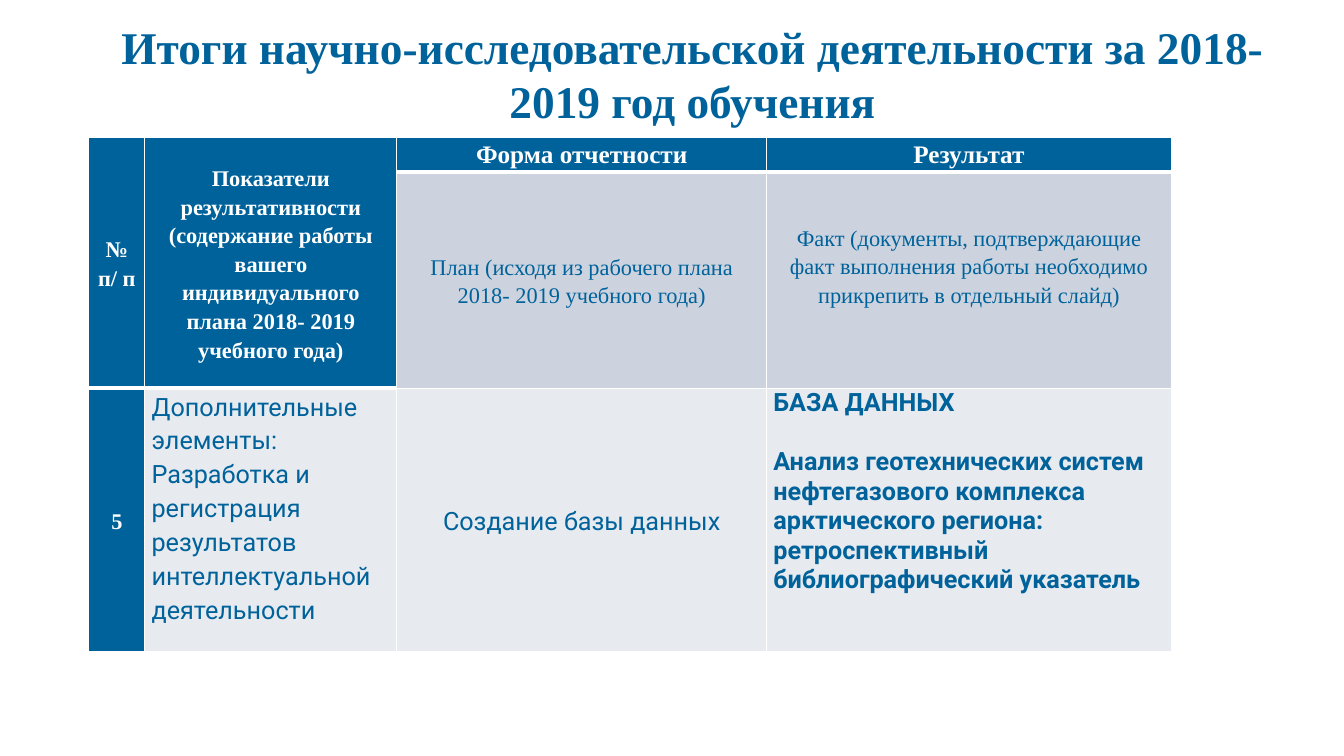
from dataclasses import dataclass

from lxml.etree import SubElement
from pptx import Presentation
from pptx.dml.color import RGBColor
from pptx.enum.text import MSO_ANCHOR as Anchor, PP_ALIGN as Align
from pptx.oxml.ns import qn
from pptx.util import Cm, Pt


@dataclass(frozen=True)
class Theme:
    blue: str = "00629B"
    white: str = "FFFFFF"
    plan_fill: str = "CCD3DE"
    row_fill: str = "E7EAEF"
    serif: str = "Times New Roman"
    sans: str = "Roboto"
    title_size: float = 32.4
    large: int = 18
    small: int = 16
    thin: int = 1
    thick: int = 3


THEME = Theme()
COLUMN_WIDTHS = (1.41, 6.35, 9.32, 10.2)
ROW_HEIGHTS = (0.84, 5.05, 6.63)


def add_paragraphs(frame, lines, size, font, color, bold=False,
                   align=Align.CENTER, spacing=None, gap=0):
    """Write each line as one paragraph, with a gap between neighbours."""
    for index, line in enumerate(lines):
        paragraph = frame.add_paragraph() if index else frame.paragraphs[0]
        paragraph.alignment = align
        if spacing:
            paragraph.line_spacing = spacing
        if index:
            paragraph.space_before = Pt(gap)
        run = paragraph.add_run()
        run.text = line
        run.font.size = Pt(size)
        run.font.name = font
        run.font.bold = bold
        run.font.color.rgb = RGBColor.from_string(color)


def set_borders(cell, bottom):
    """Draw white lines round a cell; they must come before its fill."""
    properties = cell._tc.get_or_add_tcPr()
    widths = {"a:lnL": THEME.thin, "a:lnR": THEME.thin,
              "a:lnT": THEME.thin, "a:lnB": bottom}
    for tag, width in widths.items():
        line = SubElement(properties, qn(tag), w=str(Pt(width)))
        fill = SubElement(line, qn("a:solidFill"))
        SubElement(fill, qn("a:srgbClr"), val=THEME.white)


def fill_cell(cell, lines, fill, size, font=THEME.serif, color=THEME.blue,
              anchor=Anchor.MIDDLE, bottom=THEME.thin, inset=0,
              spacing=1.15, **text):
    set_borders(cell, bottom)
    cell.fill.solid()
    cell.fill.fore_color.rgb = RGBColor.from_string(fill)
    cell.margin_left = cell.margin_right = Cm(0.17)
    cell.margin_top = 0
    cell.margin_bottom = Cm(inset)
    cell.vertical_anchor = anchor
    add_paragraphs(cell.text_frame, lines, size, font, color,
                   spacing=spacing, **text)


def add_title(slide, text):
    title = slide.shapes.add_textbox(Cm(2.21), Cm(0.71), Cm(30.48), Cm(2.29))
    title.text_frame.word_wrap = True
    title.text_frame.vertical_anchor = Anchor.MIDDLE
    add_paragraphs(title.text_frame, [text], THEME.title_size, THEME.serif,
                   THEME.blue, bold=True)


def add_results_grid(slide):
    grid = slide.shapes.add_table(
        len(ROW_HEIGHTS), len(COLUMN_WIDTHS), Cm(2.24), Cm(3.46),
        Cm(sum(COLUMN_WIDTHS)), Cm(sum(ROW_HEIGHTS))).table
    for column, width in zip(grid.columns, COLUMN_WIDTHS):
        column.width = Cm(width)
    for row, height in zip(grid.rows, ROW_HEIGHTS):
        row.height = Cm(height)
    for column in (0, 1):
        grid.cell(0, column).merge(grid.cell(1, column))
    return grid


def fill_header(grid):
    headings = (
        (["№ п/ п"], THEME.small, Anchor.MIDDLE),
        (["Показатели результативности",
          "(содержание работы вашего индивидуального плана "
          "2018- 2019 учебного года)"], THEME.small, Anchor.MIDDLE),
        (["Форма отчетности"], THEME.large, Anchor.TOP),
        (["Результат"], THEME.large, Anchor.TOP),
    )
    for column, (lines, size, anchor) in enumerate(headings):
        fill_cell(grid.cell(0, column), lines, THEME.blue, size,
                  color=THEME.white, anchor=anchor, bottom=THEME.thick,
                  bold=True)
    fill_cell(grid.cell(1, 2),
              ["План (исходя из рабочего плана 2018- 2019 учебного года)"],
              THEME.plan_fill, THEME.small)
    fill_cell(grid.cell(1, 3),
              ["Факт (документы, подтверждающие факт выполнения работы "
               "необходимо прикрепить в отдельный слайд)"],
              THEME.plan_fill, THEME.small, inset=0.75)


def fill_result(grid):
    number, indicator, plan, result = (grid.cell(2, c) for c in range(4))
    fill_cell(number, ["5"], THEME.blue, THEME.small, color=THEME.white,
              bold=True)
    fill_cell(indicator,
              ["Дополнительные элементы: Разработка и регистрация "
               "результатов интеллектуальной деятельности"],
              THEME.row_fill, THEME.large, THEME.sans, anchor=Anchor.TOP,
              align=Align.LEFT)
    fill_cell(plan, ["Создание базы данных"], THEME.row_fill, THEME.large,
              THEME.sans)
    fill_cell(result,
              ["БАЗА ДАННЫХ",
               "Анализ геотехнических систем нефтегазового комплекса "
               "арктического региона: ретроспективный "
               "библиографический указатель"],
              THEME.row_fill, THEME.large, THEME.sans, anchor=Anchor.TOP,
              align=Align.LEFT, spacing=1, gap=21, bold=True)


def main():
    deck = Presentation()
    deck.slide_width, deck.slide_height = Cm(33.87), Cm(19.05)
    slide = deck.slides.add_slide(deck.slide_layouts[6])

    # Heading
    add_title(slide, "Итоги научно-исследовательской деятельности "
                     "за 2018- 2019 год обучения")

    # Results by indicator
    grid = add_results_grid(slide)
    fill_header(grid)
    fill_result(grid)

    deck.save("out.pptx")


if __name__ == "__main__":
    main()
